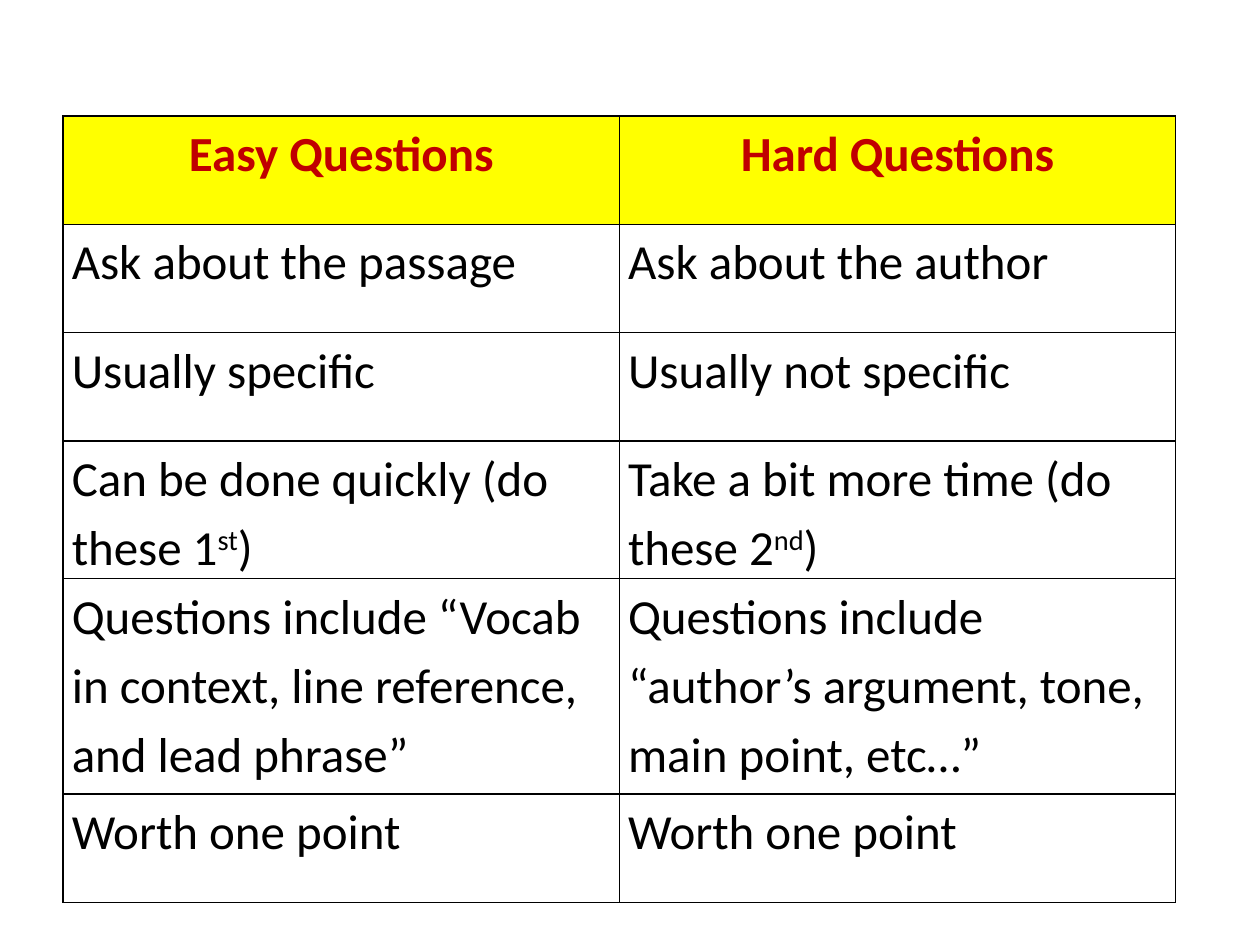
from lxml.etree import SubElement
from pptx import Presentation
from pptx.dml.color import RGBColor
from pptx.enum.text import PP_ALIGN
from pptx.oxml.ns import qn
from pptx.util import Inches, Pt

COLORS = {"header": "FFFF00", "heading": "C00000", "body": "000000", "border": "000000"}

# Each cell is a list of (text, is_superscript) runs
HEADINGS = ["Easy Questions", "Hard Questions"]
COMPARISONS = [
    ["Ask about the passage", "Ask about the author"],
    ["Usually specific", "Usually not specific"],
    [("Can be done quickly (do these 1", "st", ")"),
     ("Take a bit more time (do these 2", "nd", ")")],
    ["Questions include “Vocab in context, line reference, and lead phrase”",
     "Questions include “author’s argument, tone, main point, etc…”"],
    ["Worth one point", "Worth one point"],
]
ROW_HEIGHTS = [0.86, 0.86, 0.86, 0.86, 1.71, 0.86]


def write_text(frame, text, *, color, bold=False, align=PP_ALIGN.LEFT, size=28):
    """Write a string, or a (before, superscript, after) tuple."""
    paragraph = frame.paragraphs[0]
    paragraph.alignment = align
    paragraph.line_spacing = 1.15
    pieces = (text,) if isinstance(text, str) else text
    for index, piece in enumerate(pieces):
        run = paragraph.add_run()
        run.text = piece
        run.font.name = "Calibri"
        run.font.size = Pt(size)
        run.font.bold = bold
        run.font.color.rgb = RGBColor.from_string(COLORS[color])
        if index == 1:
            run.font._element.set("baseline", "30000")


def draw_borders(cell, width=1):
    properties = cell._tc.get_or_add_tcPr()
    for side in ("a:lnL", "a:lnR", "a:lnT", "a:lnB"):
        line = SubElement(properties, qn(side), w=str(Pt(width)))
        fill = SubElement(line, qn("a:solidFill"))
        SubElement(fill, qn("a:srgbClr"), val=COLORS["border"])


def format_cell(cell, text, is_heading):
    cell.margin_left = cell.margin_right = Inches(0.07)
    cell.margin_top = cell.margin_bottom = 0
    draw_borders(cell)
    if is_heading:
        cell.fill.solid()
        cell.fill.fore_color.rgb = RGBColor.from_string(COLORS["header"])
        write_text(cell.text_frame, text, color="heading", bold=True, align=PP_ALIGN.CENTER)
    else:
        cell.fill.background()
        write_text(cell.text_frame, text, color="body")


def add_question_table(slide, left, top, width):
    rows = [HEADINGS] + COMPARISONS
    height = Inches(sum(ROW_HEIGHTS))
    table = slide.shapes.add_table(len(rows), len(HEADINGS), left, top, width, height).table
    table.first_row = table.horz_banding = False
    for column in table.columns:
        column.width = width // len(HEADINGS)
    for row_index, (row, row_height) in enumerate(zip(rows, ROW_HEIGHTS)):
        table.rows[row_index].height = Inches(row_height)
        for column_index, text in enumerate(row):
            format_cell(table.cell(row_index, column_index), text, row_index == 0)


def main():
    presentation = Presentation()
    presentation.slide_width, presentation.slide_height = Inches(10), Inches(7.5)
    slide = presentation.slides.add_slide(presentation.slide_layouts[6])
    # Comparison of easy and hard questions
    add_question_table(slide, Inches(0.5), Inches(0.92), Inches(8.83))
    presentation.save("out.pptx")


if __name__ == "__main__":
    main()
